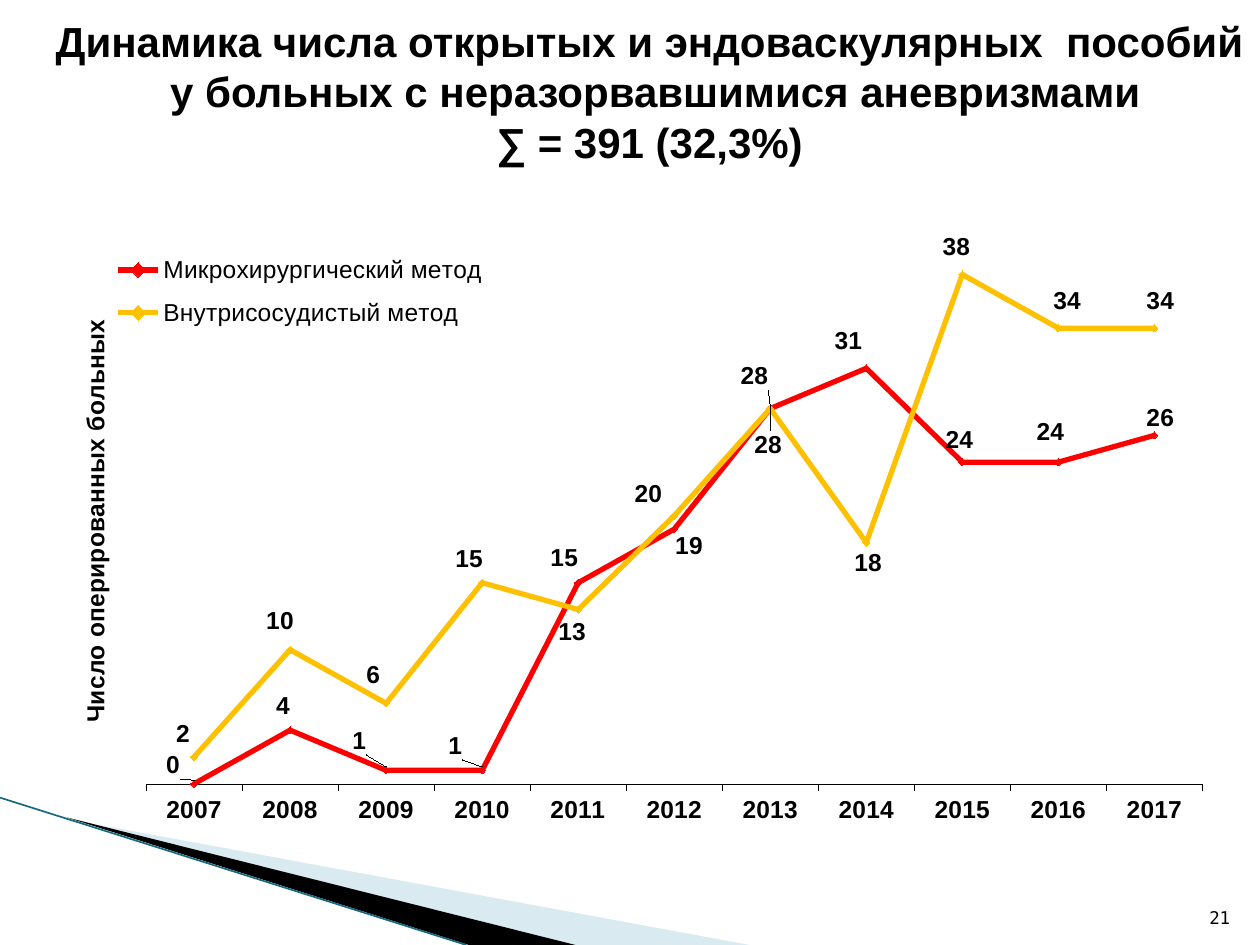
from dataclasses import dataclass

from lxml.etree import SubElement
from pptx import Presentation
from pptx.chart.data import CategoryChartData
from pptx.dml.color import RGBColor
from pptx.enum.chart import XL_CHART_TYPE as ChartType
from pptx.enum.chart import XL_LABEL_POSITION as LabelPosition
from pptx.enum.chart import XL_LEGEND_POSITION as LegendPosition
from pptx.enum.chart import XL_MARKER_STYLE as MarkerStyle
from pptx.enum.chart import XL_TICK_LABEL_POSITION as TickLabels
from pptx.enum.chart import XL_TICK_MARK as TickMark
from pptx.enum.shapes import MSO_CONNECTOR as Connector
from pptx.enum.text import MSO_ANCHOR as Anchor
from pptx.enum.text import MSO_AUTO_SIZE as AutoSize
from pptx.enum.text import PP_ALIGN as Align
from pptx.oxml import parse_xml
from pptx.oxml.ns import nsdecls, qn
from pptx.util import Cm, Pt


@dataclass(frozen=True)
class Theme:
    font: str = "Arial"
    number_font: str = "DejaVu Sans Mono"
    black: str = "000000"
    pale: str = "A0CBDC"
    edge: str = "17697F"
    title_size: int = 24
    chart_size: int = 14
    number_size: int = 10


theme = Theme()

TITLE = [
    "Динамика числа открытых и эндоваскулярных  пособий",
    " у больных с неразорвавшимися аневризмами",
    "∑ = 391 (32,3%)",
]
TITLE_BOX = (0.79, 0.18, 24.61, 3.58)
SLIDE_NUMBER = "21"
NUMBER_BOX = (24.03, 17.81, 1.02, 1.02)
AXIS_TITLE = "Число оперированных больных"
YEARS = [str(year) for year in range(2007, 2018)]

# label centres, in cm from each point
SERIES = [
    {
        "name": "Микрохирургический метод",
        "color": "FF0000",
        "values": [0, 4, 1, 1, 15, 19, 28, 31, 24, 24, 26],
        "labels": [(-0.42, -0.34), (-0.14, -0.46), (-0.54, -0.56), (-0.54, -0.46),
                   (-0.28, -0.48), (0.3, 0.36), (-0.32, -0.62), (-0.36, -0.52),
                   (-0.06, -0.42), (-0.16, -0.58), (0.12, -0.32)],
    },
    {
        "name": "Внутрисосудистый метод",
        "color": "FFC000",
        "values": [2, 10, 6, 15, 13, 20, 28, 18, 38, 34, 34],
        "labels": [(-0.22, -0.44), (-0.2, -0.56), (-0.26, -0.54), (-0.26, -0.44),
                   (-0.12, 0.48), (-0.52, -0.42), (-0.04, 0.76), (0.04, 0.44),
                   (-0.12, -0.52), (0.18, -0.52), (0.12, -0.52)],
    },
]
CHART_BOX = (0.79, 4.32, 23.93, 13.51)
LABEL_RISE = 0.42
PLOT_AREA = {"x": 0.09, "y": 0.05, "w": 0.89, "h": 0.8}
LEGEND_AREA = {"x": 0.06, "y": 0.04, "w": 0.32, "h": 0.15}
AXIS_TITLE_AREA = {"x": 0.03, "y": 0.15}

WEDGES = [
    ([(1.4, 16.52), (15.11, 19.05), (11.58, 19.05)], theme.pale, 40),
    ([(1.35, 16.48), (11.6, 19.05), (9.45, 19.05)], theme.black, 100),
]
EDGE_LINE = (0, 16.08, 9.4, 19.05)


def lengths(values):
    return [Cm(value) for value in values]


def style_font(font, size, name=theme.font, bold=False):
    font.name, font.size, font.bold = name, Pt(size), bold
    font.color.rgb = RGBColor.from_string(theme.black)


def make_layout(area, inner=False):
    layout = parse_xml(f"<c:layout {nsdecls('c')}/>")
    manual = SubElement(layout, qn("c:manualLayout"))
    if inner:
        SubElement(manual, qn("c:layoutTarget")).set("val", "inner")
    if "w" in area or inner:
        for key in ("xMode", "yMode"):
            SubElement(manual, qn(f"c:{key}")).set("val", "edge")
    for key, value in area.items():
        SubElement(manual, qn(f"c:{key}")).set("val", f"{value:.4f}")
    return layout


def replace_layout(parent, layout, previous_tag=None):
    for old in parent.findall(qn("c:layout")):
        parent.remove(old)
    previous = parent.find(qn(previous_tag)) if previous_tag else None
    if previous is None:
        parent.insert(0, layout)
    else:
        previous.addnext(layout)


def add_wedge(slide, points, color, opacity):
    corners = [tuple(lengths(point)) for point in points]
    builder = slide.shapes.build_freeform(*corners[0])
    builder.add_line_segments(corners[1:], close=True)
    shape = builder.convert_to_shape()
    shape.shadow.inherit = False
    shape.fill.solid()
    shape.fill.fore_color.rgb = RGBColor.from_string(color)
    shape.line.fill.background()
    if opacity < 100:
        fill_color = shape._element.spPr.find(qn("a:solidFill"))[0]
        SubElement(fill_color, qn("a:alpha")).set("val", str(opacity * 1000))


def add_edge_line(slide):
    line = slide.shapes.add_connector(Connector.STRAIGHT, *lengths(EDGE_LINE))
    line.line.color.rgb = RGBColor.from_string(theme.edge)
    line.line.width = Pt(0.95)
    SubElement(line._element.spPr, qn("a:effectLst"))


def add_title(slide):
    title = slide.shapes.title
    title.left, title.top, title.width, title.height = lengths(TITLE_BOX)
    frame = title.text_frame
    frame.text = "\n".join(TITLE)
    frame.auto_size = AutoSize.NONE
    frame.vertical_anchor = Anchor.TOP
    for paragraph in frame.paragraphs:
        paragraph.alignment = Align.CENTER
        for run in paragraph.runs:
            style_font(run.font, theme.title_size, bold=True)


def add_slide_number(slide):
    frame = slide.shapes.add_textbox(*lengths(NUMBER_BOX)).text_frame
    frame.word_wrap = True
    frame.vertical_anchor = Anchor.BOTTOM
    frame.text = SLIDE_NUMBER
    paragraph = frame.paragraphs[0]
    paragraph.alignment = Align.RIGHT
    style_font(paragraph.runs[0].font, theme.number_size, theme.number_font)


def style_series(series, content):
    color = RGBColor.from_string(content["color"])
    series.smooth = False
    series.format.line.color.rgb = color
    series.format.line.width = Pt(3)
    series.marker.style = MarkerStyle.DIAMOND
    series.marker.size = 4
    series.marker.format.fill.solid()
    series.marker.format.fill.fore_color.rgb = color
    series.marker.format.line.color.rgb = color
    labels = series.data_labels
    labels.show_value = True
    labels.position = LabelPosition.ABOVE
    style_font(labels.font, theme.chart_size, bold=True)
    for index, (right, down) in enumerate(content["labels"]):
        label = series.points[index].data_label
        label.position = LabelPosition.ABOVE
        style_font(label.font, theme.chart_size, bold=True)
        shift = {"x": right / CHART_BOX[2], "y": (down + LABEL_RISE) / CHART_BOX[3]}
        element = labels._element.findall(qn("c:dLbl"))[index]
        replace_layout(element, make_layout(shift), "c:idx")


def add_chart(slide):
    data = CategoryChartData()
    data.categories = YEARS
    for content in SERIES:
        data.add_series(content["name"], content["values"])
    chart = slide.shapes.add_chart(
        ChartType.LINE_MARKERS, *lengths(CHART_BOX), data).chart
    style_font(chart.font, theme.chart_size)
    chart.has_title = False
    plot = chart.plots[0]
    plot.vary_by_categories = False
    for series, content in zip(plot.series, SERIES):
        style_series(series, content)

    years = chart.category_axis
    years.major_tick_mark = TickMark.OUTSIDE
    years.format.line.color.rgb = RGBColor.from_string(theme.black)
    years.format.line.width = Pt(0.3)
    style_font(years.tick_labels.font, theme.chart_size, bold=True)

    patients = chart.value_axis
    patients.minimum_scale, patients.maximum_scale = 0, 40
    patients.has_major_gridlines = False
    patients.tick_label_position = TickLabels.NONE
    patients.axis_title.text_frame.text = AXIS_TITLE
    run = patients.axis_title.text_frame.paragraphs[0].runs[0]
    style_font(run.font, theme.chart_size, bold=True)
    patients.axis_title.text_frame._txBody.bodyPr.set("rot", "-5400000")
    title_layout = make_layout(AXIS_TITLE_AREA, inner=False)
    for key in ("yMode", "xMode"):
        mode = parse_xml(f'<c:{key} {nsdecls("c")} val="edge"/>')
        title_layout[0].insert(0, mode)
    replace_layout(patients.axis_title._element, title_layout, "c:tx")
    patients.visible = False

    chart.has_legend = True
    chart.legend.position = LegendPosition.BOTTOM
    chart.legend.include_in_layout = True
    style_font(chart.legend.font, theme.chart_size)
    replace_layout(chart.legend._element, make_layout(LEGEND_AREA), "c:legendPos")
    replace_layout(chart._chartSpace.chart.plotArea, make_layout(PLOT_AREA, inner=True))


def main():
    presentation = Presentation()
    presentation.slide_width, presentation.slide_height = Cm(25.4), Cm(19.05)
    slide = presentation.slides.add_slide(presentation.slide_layouts[5])
    for wedge in WEDGES:
        add_wedge(slide, *wedge)
    add_edge_line(slide)
    add_slide_number(slide)
    add_title(slide)
    add_chart(slide)
    presentation.save("out.pptx")


if __name__ == "__main__":
    main()
